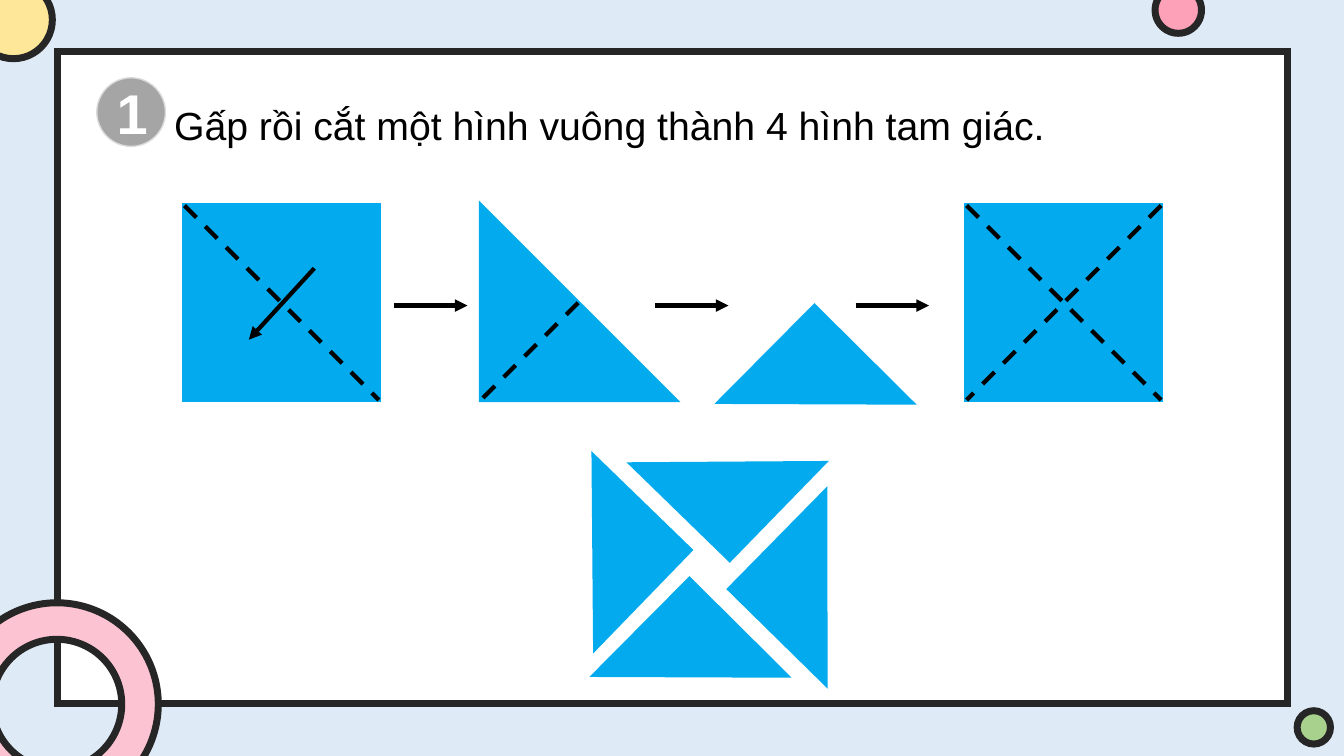
"""Build the slide on folding and cutting a square into four triangles."""
from lxml import etree
from pptx import Presentation
from pptx import util as u
from pptx.dml.color import RGBColor
from pptx.enum import dml, shapes, text
from pptx.oxml import ns

SKY, INK, PAPER, BLUE, BLACK = "DEEBF7", "262626", "FFFFFF", "03ABEE", "000000"
TASK = "Gấp rồi cắt một hình vuông thành 4 hình tam giác."
TASK_AREA = (4.14, 1.83, 25.96, 1.83)
NUMBER = "1"
BADGE = (2.44, 1.96, 1.73, 1.73)
FRAME = (1.45, 1.3, 30.99, 16.43)
RING, RING_BAND = (-1.12, 15.19, 5.11, 5.11), 0.18
DISCS = [
    (-0.64, -0.48, 1.96, "FFE799"),
    (32.69, 17.91, 0.84, "A9D18E"),
    (29.11, -0.33, 1.17, "FCA1B7"),
]
SIDE, PAPER_TOP = 4.9, 5.18
FIRST_LEFT, FOLDED_LEFT, LAST_LEFT = 4.65, 12.12, 24.36
FOLD_ARROW = (7.92, 6.76, 6.27, 8.56)
STEP_ARROWS, STEP_Y, STEP_LENGTH = (9.93, 16.51, 21.56), 7.7, 1.85
QUARTER = (3.4, 3.45)
QUARTERS = [
    (18.85, 8.41, 134.8),
    (15.7, 15.29, 134.8),
    (13.28, 12.19, 224.1),
    (16.64, 9.96, 314.2),
    (19.1, 13.08, 44.5),
]

deck = Presentation()
deck.slide_width, deck.slide_height = u.Cm(33.87), u.Cm(19.05)
slide = deck.slides.add_slide(deck.slide_layouts[6])
kinds = shapes.MSO_SHAPE


def paint(fill, colour):
    fill.solid()
    fill.fore_color.rgb = RGBColor.from_string(colour)


def add_part(kind, area, fill, outline, width, angle=0):
    part = slide.shapes.add_shape(kind, *map(u.Cm, area))
    part.shadow.inherit = False
    part.rotation = angle
    paint(part.fill, fill)
    paint(part.line.fill, outline)
    part.line.width = u.Pt(width)
    join = etree.SubElement(part.line._get_or_add_ln(), ns.qn("a:miter"))
    join.set("lim", "800000")
    return part


def add_line(ends, dashed=False):
    stroke = slide.shapes.add_connector(shapes.MSO_CONNECTOR.STRAIGHT, *map(u.Cm, ends))
    paint(stroke.line.fill, BLACK)
    stroke.line.width = u.Pt(3)
    if dashed:
        stroke.line.dash_style = dml.MSO_LINE.DASH
    else:
        tip = etree.SubElement(stroke.line._get_or_add_ln(), ns.qn("a:tailEnd"))
        tip.set("type", "triangle")
    etree.SubElement(stroke._element.spPr, ns.qn("a:effectLst"))


def write(paragraph, words, size, colour, bold=False):
    run = paragraph.add_run()
    run.text = words
    run.font.name, run.font.size, run.font.bold = "Arial", u.Pt(size), bold
    paint(run.font.fill, colour)


paint(slide.background.fill, SKY)
add_part(kinds.RECTANGLE, FRAME, PAPER, INK, 5)
ring = add_part(kinds.DONUT, RING, "FCC4D2", INK, 5)
ring.adjustments[0] = RING_BAND
for left, top, size, colour in DISCS:
    add_part(kinds.OVAL, (left, top, size, size), colour, INK, 5)

task = slide.shapes.add_textbox(*map(u.Cm, TASK_AREA)).text_frame
task.word_wrap = True
task.paragraphs[0].line_spacing = 1.5
write(task.paragraphs[0], TASK, 28, BLACK)

badge = add_part(kinds.OVAL, BADGE, "A5A5A5", "DBDBDB", 1).text_frame
badge.vertical_anchor = text.MSO_ANCHOR.MIDDLE
badge.paragraphs[0].alignment = text.PP_ALIGN.CENTER
write(badge.paragraphs[0], NUMBER, 40, PAPER, True)

bottom, middle = PAPER_TOP + SIDE, PAPER_TOP + SIDE / 2
for left in (FIRST_LEFT, LAST_LEFT):
    add_part(kinds.RECTANGLE, (left, PAPER_TOP, SIDE, SIDE), BLUE, BLUE, 3)
    add_line((left, PAPER_TOP, left + SIDE, bottom), True)
add_line((LAST_LEFT + SIDE, PAPER_TOP, LAST_LEFT, bottom), True)
add_line(FOLD_ARROW)

add_part(kinds.RIGHT_TRIANGLE, (FOLDED_LEFT, PAPER_TOP, SIDE, SIDE), BLUE, BLUE, 3)
add_line((FOLDED_LEFT + SIDE / 2, middle, FOLDED_LEFT, bottom), True)

for left, top, angle in QUARTERS:
    add_part(kinds.RIGHT_TRIANGLE, (left, top, *QUARTER), BLUE, BLUE, 3, angle)
for left in STEP_ARROWS:
    add_line((left, STEP_Y, left + STEP_LENGTH, STEP_Y))

deck.save("out.pptx")
